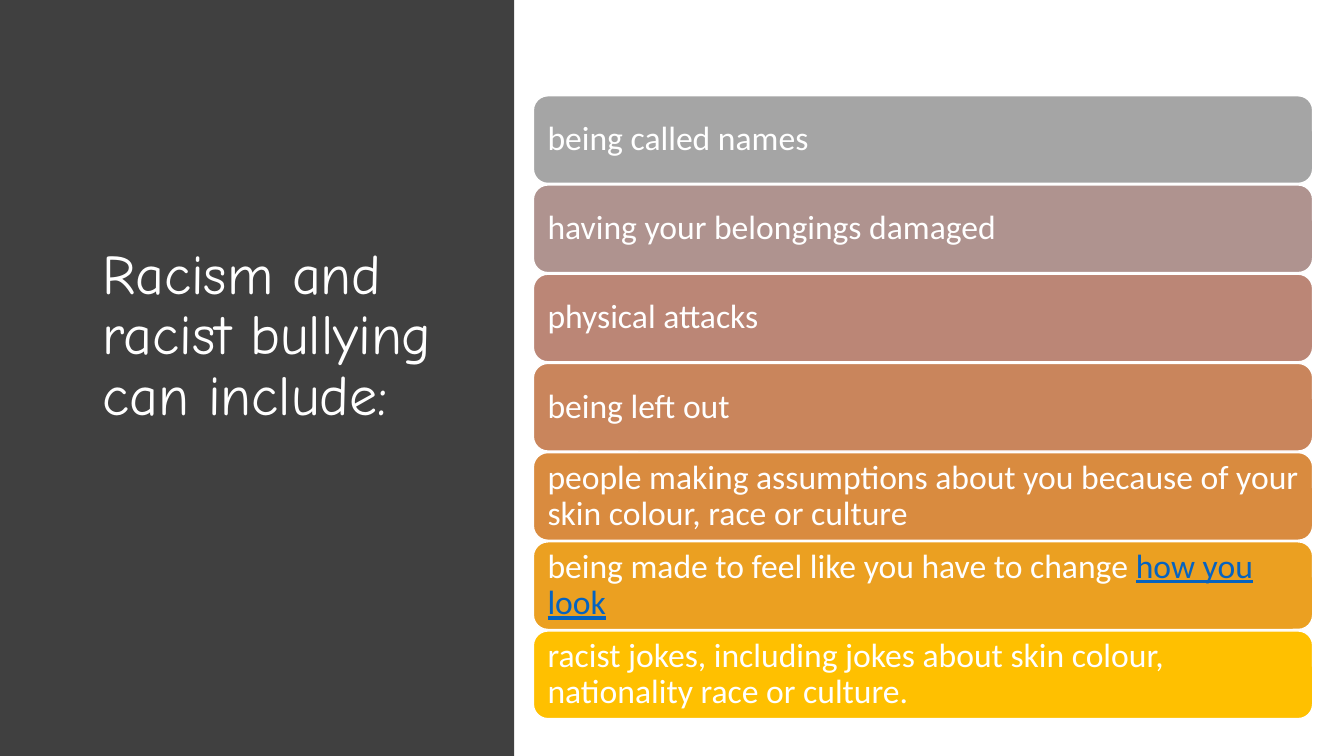
from dataclasses import dataclass

from pptx import Presentation
from pptx.dml.color import RGBColor
from pptx.enum.shapes import MSO_SHAPE
from pptx.enum.text import MSO_ANCHOR, PP_ALIGN
from pptx.shapes.autoshape import Shape
from pptx.slide import Slide
from pptx.text.text import TextFrame
from pptx.util import Inches, Pt

RECTANGLE = MSO_SHAPE.RECTANGLE
ROUNDED = MSO_SHAPE.ROUNDED_RECTANGLE
MIDDLE = MSO_ANCHOR.MIDDLE
LEFT = PP_ALIGN.LEFT

WHITE = "FFFFFF"
PANEL_GREY = "404040"
LINK_BLUE = "0563C1"

BAR_LEFT, BAR_TOP = 5.29, 0.95
BAR_WIDTH, BAR_HEIGHT = 7.73, 0.87
BAR_PITCH = 0.885

TITLE_FORMAT = {"name": "Comic Neue", "size": Pt(40)}
BAR_FORMAT = {"name": "Calibri", "size": Pt(24)}
LINK_FORMAT = BAR_FORMAT | {"underline": True}


@dataclass
class Example:
    text: str
    fill: str
    link: str = ""


EXAMPLES = [
    Example("being called names", "A5A5A5"),
    Example("having your belongings damaged", "AF938F"),
    Example("physical attacks", "BB8676"),
    Example("being left out", "C9855C"),
    Example("people making assumptions about you because of your "
            "skin colour, race or culture", "D98B3F"),
    Example("being made to feel like you have to change ", "EBA021", "how you look"),
    Example("racist jokes, including jokes about skin colour, "
            "nationality race or culture.", "FFC000"),
]


def colour(value: str) -> RGBColor:
    return RGBColor.from_string(value)


def add_block(slide: Slide, kind: MSO_SHAPE, left: float, top: float,
              width: float, height: float, fill: str) -> Shape:
    shape = slide.shapes.add_shape(
        kind, Inches(left), Inches(top), Inches(width), Inches(height))
    shape.shadow.inherit = False
    shape.fill.solid()
    shape.fill.fore_color.rgb = colour(fill)
    shape.line.fill.background()
    return shape


def set_frame(frame: TextFrame, left: float, top: float,
              right: float, bottom: float) -> None:
    settings = {
        "word_wrap": True, "vertical_anchor": MIDDLE,
        "margin_left": Inches(left), "margin_top": Inches(top),
        "margin_right": Inches(right), "margin_bottom": Inches(bottom),
    }
    for name, value in settings.items():
        setattr(frame, name, value)
    paragraph = frame.paragraphs[0]
    paragraph.alignment = LEFT
    paragraph.line_spacing = 0.9


def add_run(frame: TextFrame, text: str, font_format: dict, text_colour: str) -> None:
    run = frame.paragraphs[0].add_run()
    run.text = text
    for name, value in font_format.items():
        setattr(run.font, name, value)
    run.font.color.rgb = colour(text_colour)


def add_title(slide: Slide) -> None:
    box = slide.shapes.add_textbox(
        Inches(0.92), Inches(0.68), Inches(3.67), Inches(5.92))
    # The deep bottom margin lifts the title above the middle
    set_frame(box.text_frame, 0.1, 0.05, 0.1, 0.65)
    add_run(box.text_frame, "Racism and racist bullying can include:",
            TITLE_FORMAT, WHITE)


def add_bar(slide: Slide, example: Example, top: float) -> None:
    bar = add_block(slide, ROUNDED, BAR_LEFT, top, BAR_WIDTH, BAR_HEIGHT, example.fill)
    bar.line.color.rgb = colour(WHITE)
    bar.line.width = Pt(1)
    set_frame(bar.text_frame, 0.1, 0, 0.08, 0)
    add_run(bar.text_frame, example.text, BAR_FORMAT, WHITE)
    if example.link:
        add_run(bar.text_frame, example.link, LINK_FORMAT, LINK_BLUE)


def main() -> None:
    presentation = Presentation()
    presentation.slide_width = Inches(13.33)
    presentation.slide_height = Inches(7.5)
    slide = presentation.slides.add_slide(presentation.slide_layouts[6])

    # Dark panel with the title
    add_block(slide, RECTANGLE, 0, 0, 5.1, 7.5, PANEL_GREY)
    add_title(slide)

    # Stack of examples
    for index, example in enumerate(EXAMPLES):
        add_bar(slide, example, BAR_TOP + index * BAR_PITCH)

    presentation.save("out.pptx")


if __name__ == "__main__":
    main()
